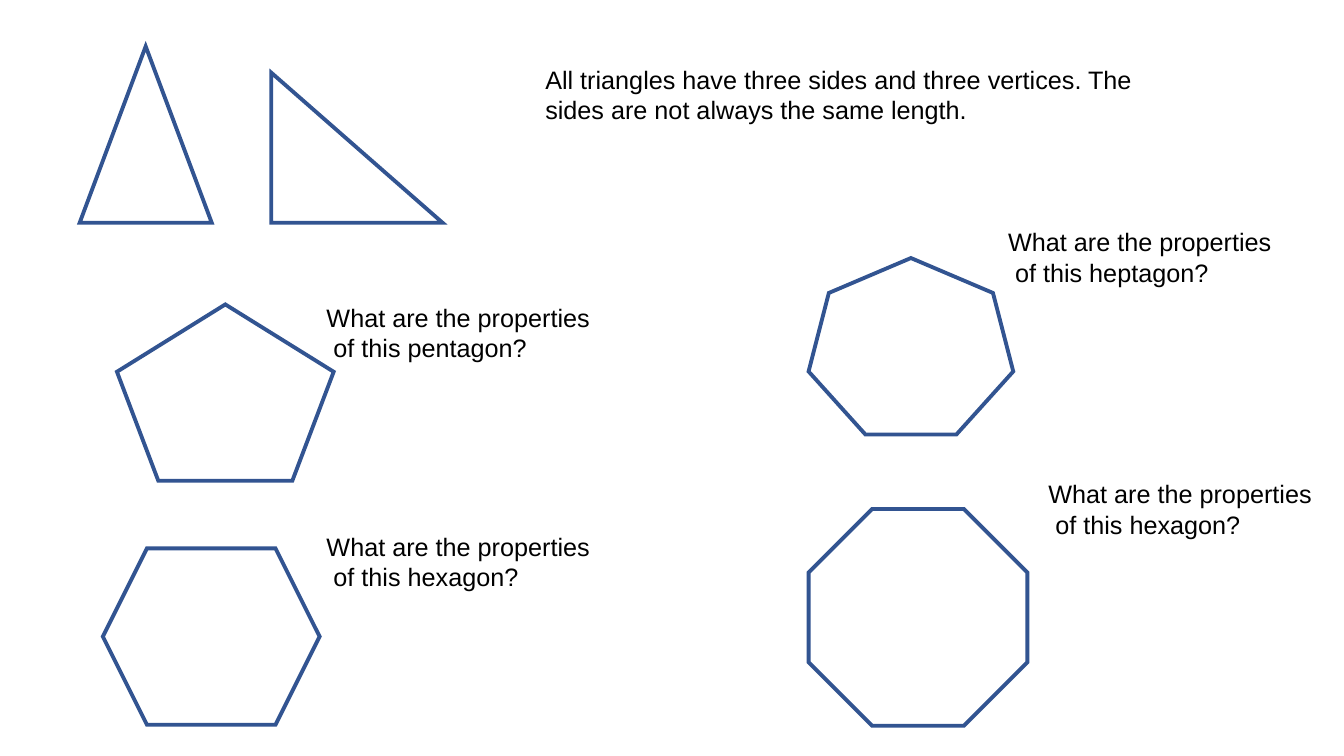
from lxml import etree
from pptx import Presentation
from pptx.dml.color import RGBColor
from pptx.enum.shapes import MSO_SHAPE
from pptx.enum.text import MSO_AUTO_SIZE
from pptx.oxml.ns import qn
from pptx.util import Inches, Pt

TRIANGLE = MSO_SHAPE.ISOSCELES_TRIANGLE
RIGHT_TRIANGLE = MSO_SHAPE.RIGHT_TRIANGLE
PENTAGON = MSO_SHAPE.REGULAR_PENTAGON
HEXAGON = MSO_SHAPE.HEXAGON
HEPTAGON = MSO_SHAPE.HEPTAGON
OCTAGON = MSO_SHAPE.OCTAGON
FIT_SHAPE = MSO_AUTO_SIZE.SHAPE_TO_FIT_TEXT

COLORS = {"outline": "325491", "text": "000000"}
FONT = "Arial"
QUESTION_SIZE = (2.84, 0.71)

# Polygon, its box, question offset from the box's top left corner, name asked
QUESTIONS = [
    (PENTAGON, (1.16, 3.02, 2.15, 1.75), (1.98, -0.07), "pentagon"),
    (HEXAGON, (1.02, 5.44, 2.15, 1.75), (2.12, -0.22), "hexagon"),
    (HEPTAGON, (8.02, 2.56, 2.03, 1.75), (1.88, -0.36), "heptagon"),
    (OCTAGON, (8.02, 5.05, 2.17, 2.15), (2.28, -0.35), "hexagon"),
]


def add_outline(page, kind, box):
    """Draw an unfilled polygon with sharp corners."""
    shape = page.shapes.add_shape(kind, *map(Inches, box))
    shape.shadow.inherit = False
    shape.fill.background()
    shape.line.color.rgb = RGBColor.from_string(COLORS["outline"])
    shape.line.width = Pt(2.75)
    line = next(shape.element.iter(qn("a:ln")))
    etree.SubElement(line, qn("a:miter"), lim="800000")


def add_text(page, box, lines, size=18, font=FONT, color="text"):
    """Write each line as its own paragraph."""
    frame = page.shapes.add_textbox(*map(Inches, box)).text_frame
    frame.word_wrap = True
    frame.auto_size = FIT_SHAPE
    for index, line in enumerate(lines):
        para = frame.add_paragraph() if index else frame.paragraphs[0]
        span = para.add_run()
        span.text = line
        span.font.size = Pt(size)
        span.font.name = font
        span.font.color.rgb = RGBColor.from_string(COLORS[color])


def add_triangles(page, box):
    """Two triangles on one base line, with the statement on the right."""
    left, top, width, height = box
    add_outline(page, TRIANGLE, (left, top, 1.31, height))
    add_outline(page, RIGHT_TRIANGLE, (left + 1.9, top + 0.26, 1.7, height - 0.26))
    add_text(page, (left + 4.52, top + 0.13, width - 4.52, 0.71),
             ["All triangles have three sides and three vertices. "
              "The sides are not always the same length."])


def add_question(page, kind, box, offset, name):
    """A polygon with its question near the upper right corner."""
    add_outline(page, kind, box)
    left, top = box[0] + offset[0], box[1] + offset[1]
    add_text(page, (left, top, *QUESTION_SIZE),
             ["What are the properties", f" of this {name}?"])


def main():
    deck = Presentation()
    deck.slide_width, deck.slide_height = Inches(13.33), Inches(7.5)
    page = deck.slides.add_slide(deck.slide_layouts[6])

    # Worked example
    add_triangles(page, (0.79, 0.46, 11.08, 1.75))

    # Polygons to describe
    for question in QUESTIONS:
        add_question(page, *question)

    deck.save("out.pptx")


if __name__ == "__main__":
    main()
